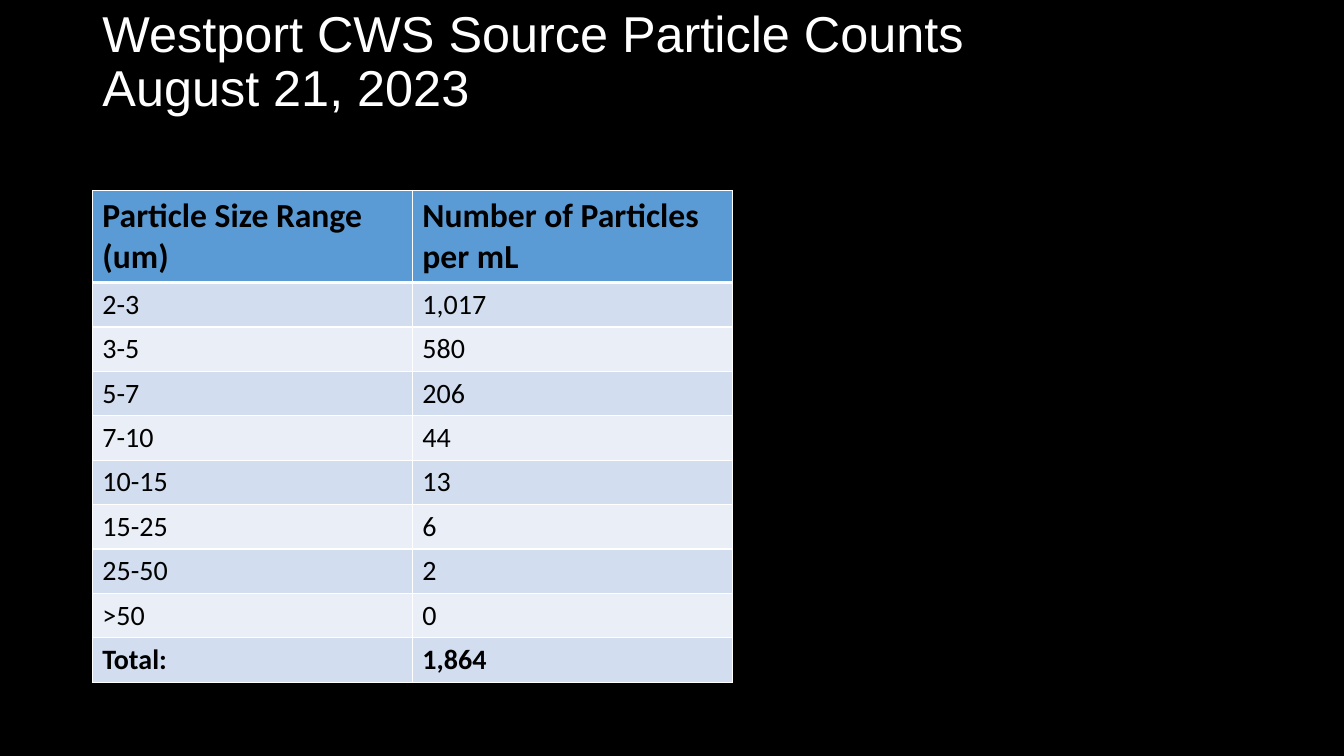
"""Build a slide with a title and a table of particle counts by size."""
from lxml.etree import SubElement
from pptx import Presentation
from pptx.dml.color import RGBColor
from pptx.enum.text import MSO_ANCHOR, MSO_AUTO_SIZE, PP_ALIGN
from pptx.oxml.ns import qn
from pptx.util import Pt

BLACK = RGBColor(0x00, 0x00, 0x00)
WHITE = RGBColor(0xFF, 0xFF, 0xFF)
BLUE = RGBColor(0x5B, 0x9B, 0xD5)
PALE = RGBColor(0xD2, 0xDE, 0xEF)
LIGHT = RGBColor(0xEA, 0xEF, 0xF7)


def write(frame, text, size, font, color, bold=False, space=None):
    frame.text = text
    for para in frame.paragraphs:
        para.alignment = PP_ALIGN.LEFT
        para.line_spacing = space
        for run in para.runs:
            run.font.size = Pt(size)
            run.font.name = font
            run.font.color.rgb = color
            run.font.bold = bold


def edge(cell, side, width):
    line = SubElement(cell._tc.get_or_add_tcPr(), qn(f"a:ln{side}"), w=str(Pt(width)))
    fill = SubElement(line, qn("a:solidFill"))
    SubElement(fill, qn("a:srgbClr"), val=str(WHITE))


prs = Presentation()
prs.slide_width, prs.slide_height = Pt(960), Pt(540)
slide = prs.slides.add_slide(prs.slide_layouts[5])
slide.background.fill.solid()
slide.background.fill.fore_color.rgb = BLACK

title = slide.shapes.title
title.left, title.top, title.width, title.height = Pt(66), Pt(0), Pt(828), Pt(90)
frame = title.text_frame
frame.word_wrap = True
frame.auto_size = MSO_AUTO_SIZE.NONE
frame.vertical_anchor = MSO_ANCHOR.MIDDLE
write(frame, "Westport CWS Source Particle Counts\vAugust 21, 2023",
      size=36, font="Arial", color=WHITE, space=0.9)

rows = [
    ("Particle Size Range\n(um)", "Number of Particles per mL"),
    ("2-3", "1,017"),
    ("3-5", "580"),
    ("5-7", "206"),
    ("7-10", "44"),
    ("10-15", "13"),
    ("15-25", "6"),
    ("25-50", "2"),
    (">50", "0"),
    ("Total:", "1,864"),
]
last = len(rows) - 1
table = slide.shapes.add_table(len(rows), 2, Pt(66), Pt(136), Pt(457.2), Pt(348)).table
for col in table.columns:
    col.width = Pt(228.6)

for r, row in enumerate(rows):
    head = r == 0
    table.rows[r].height = Pt(55.4 if head else 31.7)
    for c, text in enumerate(row):
        cell = table.cell(r, c)
        for side in "LRTB":
            thick = (head and side == "B") or (r == 1 and side == "T")
            edge(cell, side, 3 if thick else 1)
        cell.fill.solid()
        cell.fill.fore_color.rgb = BLUE if head else PALE if r % 2 else LIGHT
        write(cell.text_frame, text, size=24 if head else 20, font="Calibri",
              color=BLACK, bold=r in (0, last))

prs.save("out.pptx")
